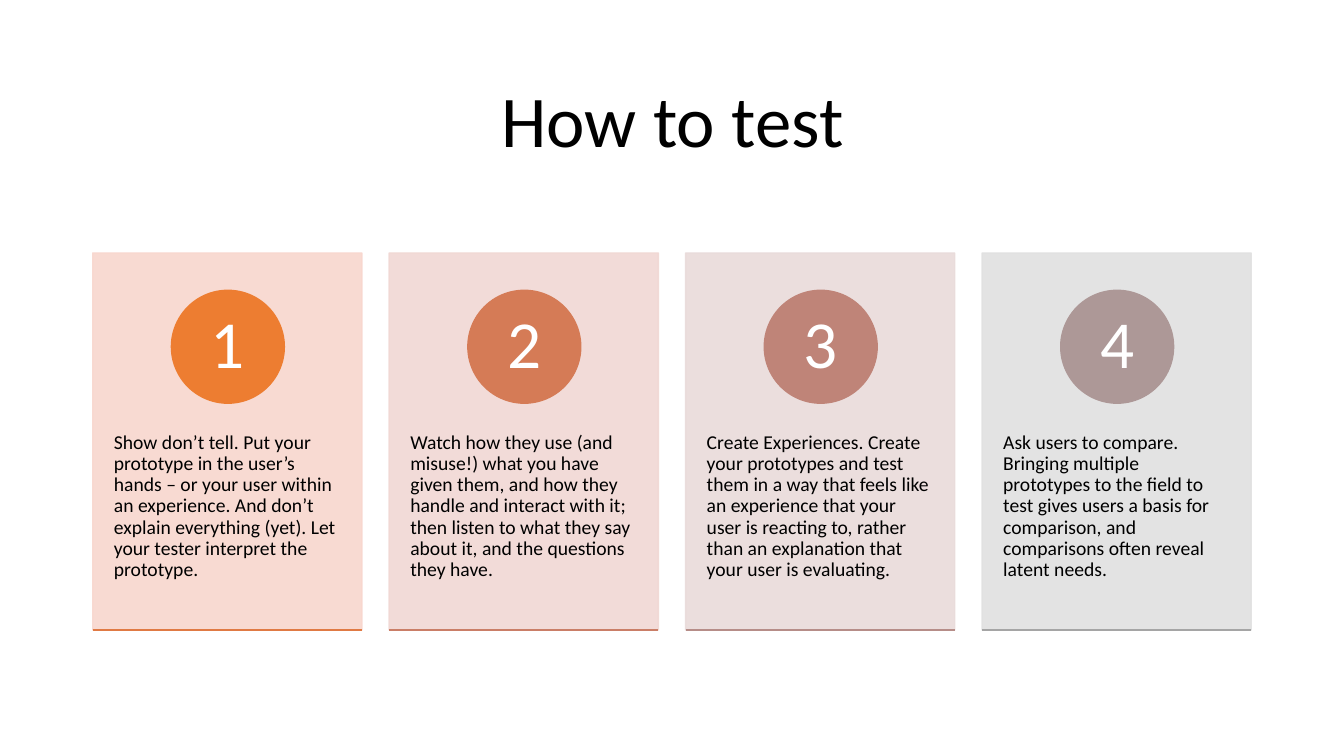
from lxml import etree
from pptx import Presentation
from pptx import util as u
from pptx.dml.color import RGBColor
from pptx.enum import shapes, text
from pptx.oxml.ns import qn

PX = 9144
HUES = {
    "ink": "000000", "white": "FFFFFF",
    "card1": "F8D7CE", "disc1": "ED7D31", "rule1": "E07A44",
    "card2": "F1D8D4", "disc2": "D57B56", "rule2": "CA7E67",
    "card3": "E9DBDA", "disc3": "BF8478", "rule3": "B68D88",
    "card4": "E1E1E1", "disc4": "AD9897", "rule4": "A5A5A5",
}
TIPS = [
    "Show don’t tell. Put your prototype in the user’s hands – or your user within an experience. "
    "And don’t explain everything (yet). Let your tester interpret the prototype.",
    "Watch how they use (and misuse!) what you have given them, and how they handle and interact "
    "with it; then listen to what they say about it, and the questions they have.",
    "Create Experiences. Create your prototypes and test them in a way that feels like an "
    "experience that your user is reacting to, rather than an explanation that your user is evaluating.",
    "Ask users to compare. Bringing multiple prototypes to the field to test gives users a basis "
    "for comparison, and comparisons often reveal latent needs.",
]
LEFT, TOP, WIDE, HIGH, STEP = 92, 251, 267, 374, 294
DISC = 112


class Deck:
    """Holds the style and the current slide, and draws its elements."""

    def __init__(self, wide, high, font):
        self.prs = Presentation()
        self.prs.slide_width, self.prs.slide_height = self.box(wide, high)
        self.slide = self.prs.slides.add_slide(self.prs.slide_layouts[5])
        self.font = font

    def box(self, *px):
        return [u.Emu(n * PX) for n in px]

    def hue(self, name):
        return RGBColor.from_string(HUES[name])

    def label(self, frame, words, size, hue, align, anchor):
        frame.text = words
        frame.word_wrap = True
        frame.auto_size = text.MSO_AUTO_SIZE.NONE
        frame.vertical_anchor = anchor
        para = frame.paragraphs[0]
        para.alignment = align
        para.line_spacing = 0.9
        font = para.runs[0].font
        font.name, font.size = self.font, u.Pt(size)
        font.color.rgb = self.hue(hue)

    def title(self, words, *px):
        head = self.slide.shapes.title
        head.left, head.top, head.width, head.height = self.box(*px)
        self.label(head.text_frame, words, 52, "ink",
                   text.PP_ALIGN.CENTER, text.MSO_ANCHOR.MIDDLE)

    def shape(self, kind, hue, *px, alpha=100):
        form = self.slide.shapes.add_shape(kind, *self.box(*px))
        form.shadow.inherit = False
        form.fill.solid()
        form.fill.fore_color.rgb = form.line.color.rgb = self.hue(hue)
        form.line.width = u.Pt(1)
        if alpha < 100:
            for tint in form._element.spPr.iter(qn("a:srgbClr")):
                etree.SubElement(tint, qn("a:alpha"), val=str(alpha * 1000))
        return form

    def disc(self, words, hue, *px):
        form = self.shape(shapes.MSO_SHAPE.OVAL, hue, *px)
        frame = form.text_frame
        frame.margin_top = frame.margin_bottom = u.Emu(PX)
        self.label(frame, words, 48, "white",
                   text.PP_ALIGN.CENTER, text.MSO_ANCHOR.MIDDLE)

    def note(self, words, *px):
        frame = self.slide.shapes.add_textbox(*self.box(*px)).text_frame
        frame.margin_left, frame.margin_right = self.box(21, 21)
        frame.margin_top, frame.margin_bottom = self.box(36, 36)
        self.label(frame, words, 14, "ink",
                   text.PP_ALIGN.LEFT, text.MSO_ANCHOR.TOP)

    def rule(self, hue, *px):
        line = self.slide.shapes.add_connector(
            shapes.MSO_CONNECTOR.STRAIGHT, *self.box(*px))
        line.line.color.rgb = self.hue(hue)
        line.line.width = u.Pt(1)
        etree.SubElement(line._element.spPr, qn("a:effectLst"))


def main():
    deck = Deck(1333, 750, "Calibri")
    deck.title("How to test", 92, 61, 1150, 124)
    for num, tip in enumerate(TIPS, 1):
        left = LEFT + (num - 1) * STEP
        base = TOP + HIGH
        deck.shape(shapes.MSO_SHAPE.RECTANGLE, f"card{num}",
                   left, TOP, WIDE, HIGH, alpha=90)
        deck.note(tip, left, 393, WIDE, 225)
        deck.disc(str(num), f"disc{num}",
                  left + (WIDE - DISC) // 2 + 1, 288, DISC, DISC)
        deck.rule(f"rule{num}", left, base, left + WIDE, base)
    deck.prs.save("out.pptx")


if __name__ == "__main__":
    main()
